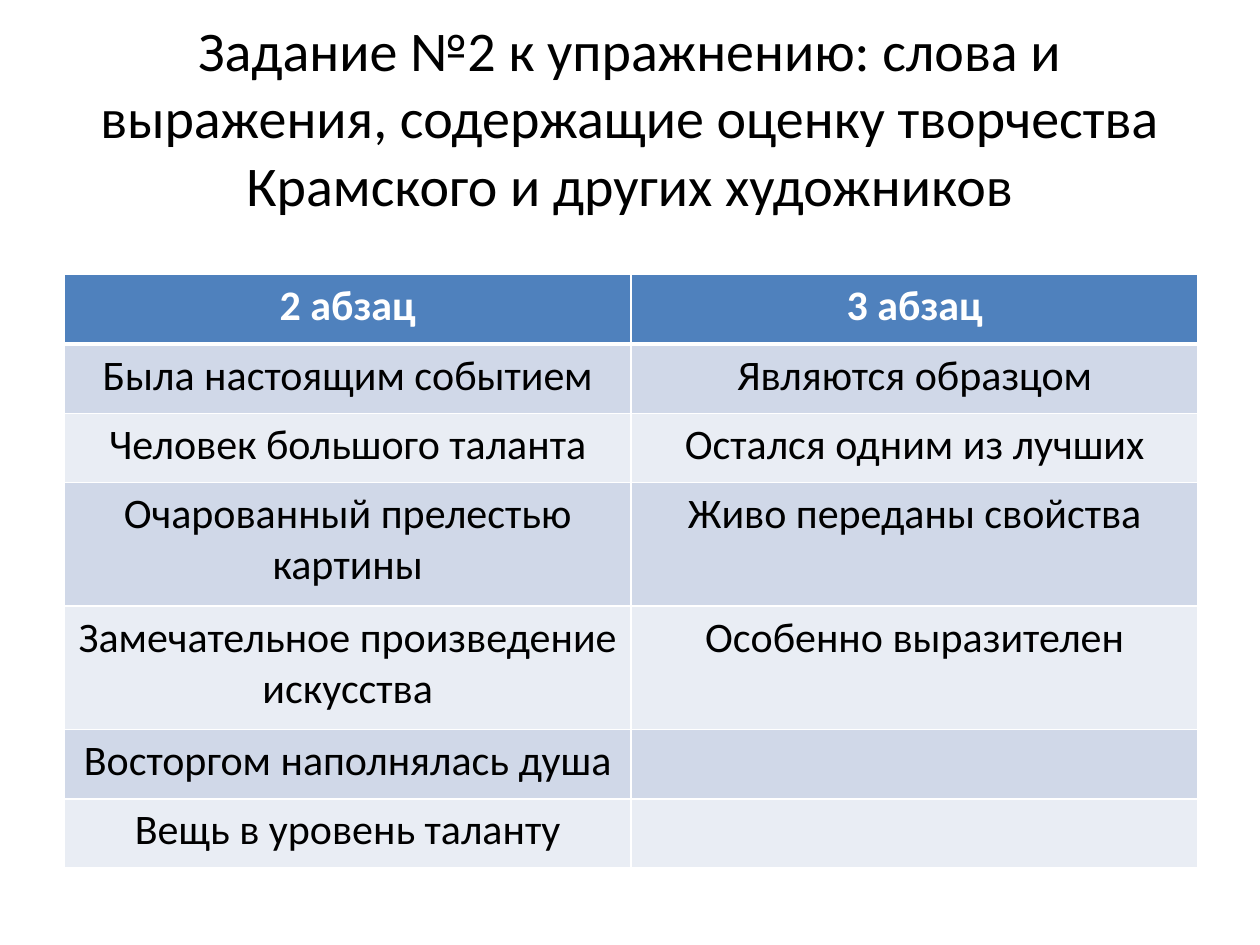
from dataclasses import dataclass

from lxml.etree import SubElement
from pptx import Presentation
from pptx.dml.color import RGBColor
from pptx.enum.text import MSO_ANCHOR as Anchor, MSO_AUTO_SIZE as Fit, PP_ALIGN as Align
from pptx.oxml.ns import qn
from pptx.util import Inches, Pt

BLACK = RGBColor(0x00, 0x00, 0x00)
WHITE = RGBColor(0xFF, 0xFF, 0xFF)
BLUE = RGBColor(0x4F, 0x81, 0xBD)
MID = RGBColor(0xD0, 0xD8, 0xE8)
PALE = RGBColor(0xE9, 0xED, 0xF4)
FONT = "Calibri"
TITLE = ("Задание №2 к упражнению: слова и выражения, содержащие оценку "
         "творчества Крамского и других художников")


@dataclass
class Row:
    left: str
    right: str = ""
    height: float = 0.55


ROWS = [
    Row("2 абзац", "3 абзац"),
    Row("Была настоящим событием", "Являются образцом"),
    Row("Человек большого таланта", "Остался одним из лучших"),
    Row("Очарованный прелестью картины", "Живо переданы свойства", 0.98),
    Row("Замечательное произведение искусства", "Особенно выразителен", 0.98),
    Row("Восторгом наполнялась душа"),
    Row("Вещь в уровень таланту"),
]


def style(frame, size: int, color: RGBColor, bold: bool = False) -> None:
    for para in frame.paragraphs:
        para.alignment = Align.CENTER
        for run in para.runs:
            font = run.font
            font.name, font.size, font.bold = FONT, Pt(size), bold
            font.color.rgb = color


def edge(cell, top: int, bottom: int) -> None:
    props = cell._tc.get_or_add_tcPr()
    sides = {"L": 1, "R": 1, "T": top, "B": bottom}
    for spot, (side, width) in enumerate(sides.items()):
        line = SubElement(props, qn(f"a:ln{side}"), w=str(Pt(width)))
        fill = SubElement(line, qn("a:solidFill"))
        SubElement(fill, qn("a:srgbClr"), val=str(WHITE))
        props.insert(spot, line)


def add_title(slide) -> None:
    title = slide.shapes.title
    title.left, title.top = Inches(0.5), Inches(0.3)
    title.width, title.height = Inches(9), Inches(1.25)
    frame = title.text_frame
    frame.text = TITLE
    frame.word_wrap = True
    frame.auto_size = Fit.NONE
    frame.vertical_anchor = Anchor.MIDDLE
    style(frame, 32, BLACK)


def add_grid(slide, rows: list[Row]) -> None:
    total = sum(row.height for row in rows)
    table = slide.shapes.add_table(
        len(rows), 2, Inches(0.51), Inches(2.18), Inches(9), Inches(total)).table
    for num, row in enumerate(rows):
        table.rows[num].height = Inches(row.height)
        head = num == 0
        shade = BLUE if head else MID if num % 2 else PALE
        for cell, text in zip(table.rows[num].cells, (row.left, row.right)):
            cell.text = text
            cell.fill.solid()
            cell.fill.fore_color.rgb = shade
            style(cell.text_frame, 24, WHITE if head else BLACK, head)
            edge(cell, 3 if num == 1 else 1, 3 if head else 1)


def main() -> None:
    deck = Presentation()
    deck.slide_width, deck.slide_height = Inches(10), Inches(7.5)
    slide = deck.slides.add_slide(deck.slide_layouts[5])
    add_title(slide)
    add_grid(slide, ROWS)
    deck.save("out.pptx")


if __name__ == "__main__":
    main()
